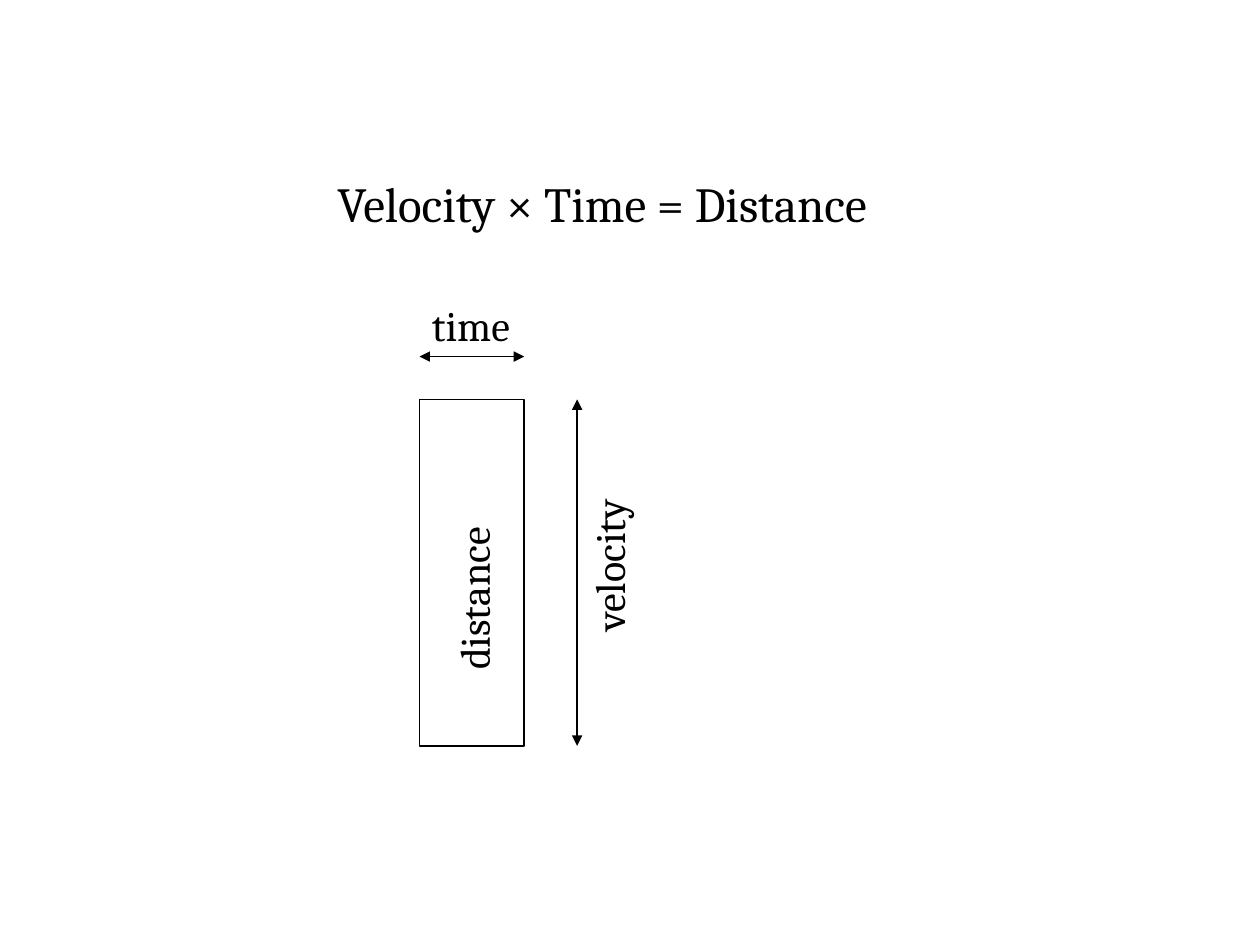
from lxml import etree
from pptx import Presentation
from pptx.dml.color import RGBColor
from pptx.enum.shapes import MSO_CONNECTOR as Connector, MSO_SHAPE as Shape
from pptx.oxml.ns import qn
from pptx.util import Inches, Pt

BLACK = RGBColor(0, 0, 0)
FONT = "Cambria"


def add_label(slide, wording, left, top, width, height, size=24, rotation=0):
    label = slide.shapes.add_textbox(
        Inches(left), Inches(top), Inches(width), Inches(height))
    label.rotation = rotation
    label.text_frame.word_wrap = True
    paragraph = label.text_frame.paragraphs[0]
    paragraph.text = wording
    paragraph.font.name = FONT
    paragraph.font.size = Pt(size)
    paragraph.font.color.rgb = BLACK


def add_dimension_arrow(slide, x1, y1, x2, y2):
    """Draw a line with an arrowhead at each end."""
    arrow = slide.shapes.add_connector(
        Connector.STRAIGHT, Inches(x1), Inches(y1), Inches(x2), Inches(y2))
    arrow.line.color.rgb = BLACK
    arrow.line.width = Pt(1)
    for end in ("a:headEnd", "a:tailEnd"):
        etree.SubElement(arrow.line._get_or_add_ln(), qn(end), type="triangle")
    etree.SubElement(arrow._element.spPr, qn("a:effectLst"))


def add_area_diagram(slide, left, top, width, height):
    """Show distance as the area of a time by velocity rectangle."""
    right, bottom = left + width, top + height
    area = slide.shapes.add_shape(
        Shape.RECTANGLE, Inches(left), Inches(top), Inches(width), Inches(height))
    area.shadow.inherit = False
    area.fill.background()
    area.line.color.rgb = BLACK
    area.line.width = Pt(0.75)

    time_y = top - 0.34
    add_dimension_arrow(slide, left, time_y, right, time_y)
    add_label(slide, "time", left, time_y - 0.5, 1.08, 0.5)

    velocity_x = right + 0.42
    add_dimension_arrow(slide, velocity_x, top, velocity_x, bottom)
    add_label(slide, "velocity", velocity_x - 0.5, top + 0.94, 1.5, 0.5, rotation=270)
    add_label(slide, "distance", left - 0.45, top + 1.12, 1.75, 0.5, rotation=270)


def main():
    presentation = Presentation()
    presentation.slide_width = Inches(10)
    presentation.slide_height = Inches(7.5)
    slide = presentation.slides.add_slide(presentation.slide_layouts[6])
    add_label(slide, "Velocity × Time = Distance", 2.58, 1.33, 5.75, 0.57, size=28)
    add_area_diagram(slide, 3.33, 3.17, 0.83, 2.75)
    presentation.save("out.pptx")


if __name__ == "__main__":
    main()
